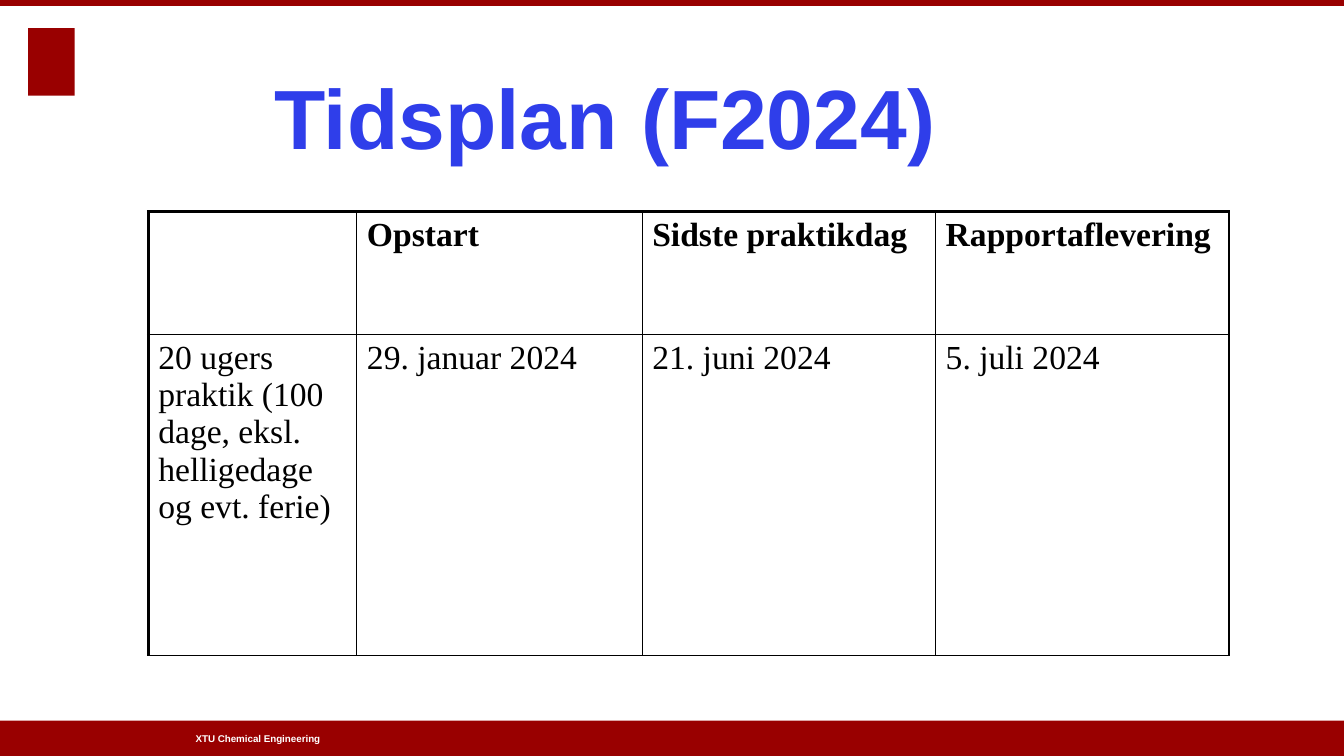
from lxml.etree import SubElement
from pptx import Presentation
from pptx.dml.color import RGBColor
from pptx.enum.shapes import MSO_SHAPE
from pptx.enum.text import MSO_ANCHOR, PP_ALIGN
from pptx.oxml.ns import qn
from pptx.util import Inches, Pt

RED = RGBColor(0x99, 0x00, 0x00)
BLUE = RGBColor(0x2F, 0x3E, 0xEA)
BLACK = RGBColor(0x00, 0x00, 0x00)
WHITE = RGBColor(0xFF, 0xFF, 0xFF)

TITLE = "Tidsplan (F2024)"
FOOTER = "XTU Chemical Engineering"
SCHEDULE = [
    ["", "Opstart", "Sidste praktikdag", "Rapportaflevering"],
    ["20 ugers praktik (100 dage, eksl. helligedage og evt. ferie)",
     "29. januar 2024", "21. juni 2024", "5. juli 2024"],
]
COLUMN_WIDTHS = [2.07, 2.83, 2.91, 2.91]
ROW_HEIGHTS = [1.22, 3.18]
RED_SHAPES = [  # left, top, width, height
    (0.28, 0.28, 0.46, 0.67),   # emblem
    (0, 7.15, 13.33, 0.35),     # footer band
    (0, 0, 13.33, 0.06),        # top band
]
THIN, THICK = 1, 2.25


def add_span(para, text, font, size, color, bold):
    span = para.add_run()
    span.text = text
    span.font.name = font
    span.font.size = Pt(size)
    span.font.bold = bold
    span.font.color.rgb = color


def set_borders(cell, widths):
    """Draw black borders; widths are points for left, right, top and bottom."""
    properties = cell._tc.get_or_add_tcPr()
    for index, (side, width) in enumerate(zip("LRTB", widths)):
        line = SubElement(properties, qn(f"a:ln{side}"), w=str(Pt(width)))
        fill = SubElement(line, qn("a:solidFill"))
        SubElement(fill, qn("a:srgbClr"), val=str(BLACK))
        properties.insert(index, line)


def add_schedule(page):
    frame = page.shapes.add_table(
        len(SCHEDULE), len(COLUMN_WIDTHS), Inches(1.47), Inches(2.1),
        Inches(sum(COLUMN_WIDTHS)), Inches(sum(ROW_HEIGHTS)))
    table = frame.table
    table.first_row = table.horz_banding = False
    for column, width in zip(table.columns, COLUMN_WIDTHS):
        column.width = Inches(width)
    for row, height in zip(table.rows, ROW_HEIGHTS):
        row.height = Inches(height)
    last_column = len(COLUMN_WIDTHS) - 1
    for r, texts in enumerate(SCHEDULE):
        for c, text in enumerate(texts):
            cell = table.cell(r, c)
            cell.fill.background()
            set_borders(cell, (THICK if c == 0 else THIN,
                               THICK if c == last_column else THIN,
                               THICK if r == 0 else THIN, THIN))
            if text:
                add_span(cell.text_frame.paragraphs[0], text,
                         "Times New Roman", 24, BLACK, r == 0)


def main():
    deck = Presentation()
    deck.slide_width, deck.slide_height = Inches(13.33), Inches(7.5)
    page = deck.slides.add_slide(deck.slide_layouts[5])

    for place in RED_SHAPES:
        shape = page.shapes.add_shape(MSO_SHAPE.RECTANGLE, *map(Inches, place))
        shape.shadow.inherit = False
        shape.fill.solid()
        shape.fill.fore_color.rgb = RED
        shape.line.fill.background()

    box = page.shapes.add_textbox(*map(Inches, (1.94, 7.15, 3.72, 0.35)))
    frame = box.text_frame
    frame.word_wrap = True
    frame.vertical_anchor = MSO_ANCHOR.MIDDLE
    frame.margin_left = frame.margin_right = 0
    frame.margin_top = frame.margin_bottom = 0
    add_span(frame.paragraphs[0], FOOTER, "Arial", 7, WHITE, True)

    title = page.shapes.title
    title.left, title.top = Inches(2.59), Inches(0.6)
    title.width, title.height = Inches(6.82), Inches(1.11)
    title.text_frame.word_wrap = False
    title.text_frame.vertical_anchor = MSO_ANCHOR.TOP
    para = title.text_frame.paragraphs[0]
    para.alignment = PP_ALIGN.CENTER
    add_span(para, TITLE, "Arial", 60, BLUE, True)

    add_schedule(page)
    deck.save("out.pptx")


if __name__ == "__main__":
    main()
